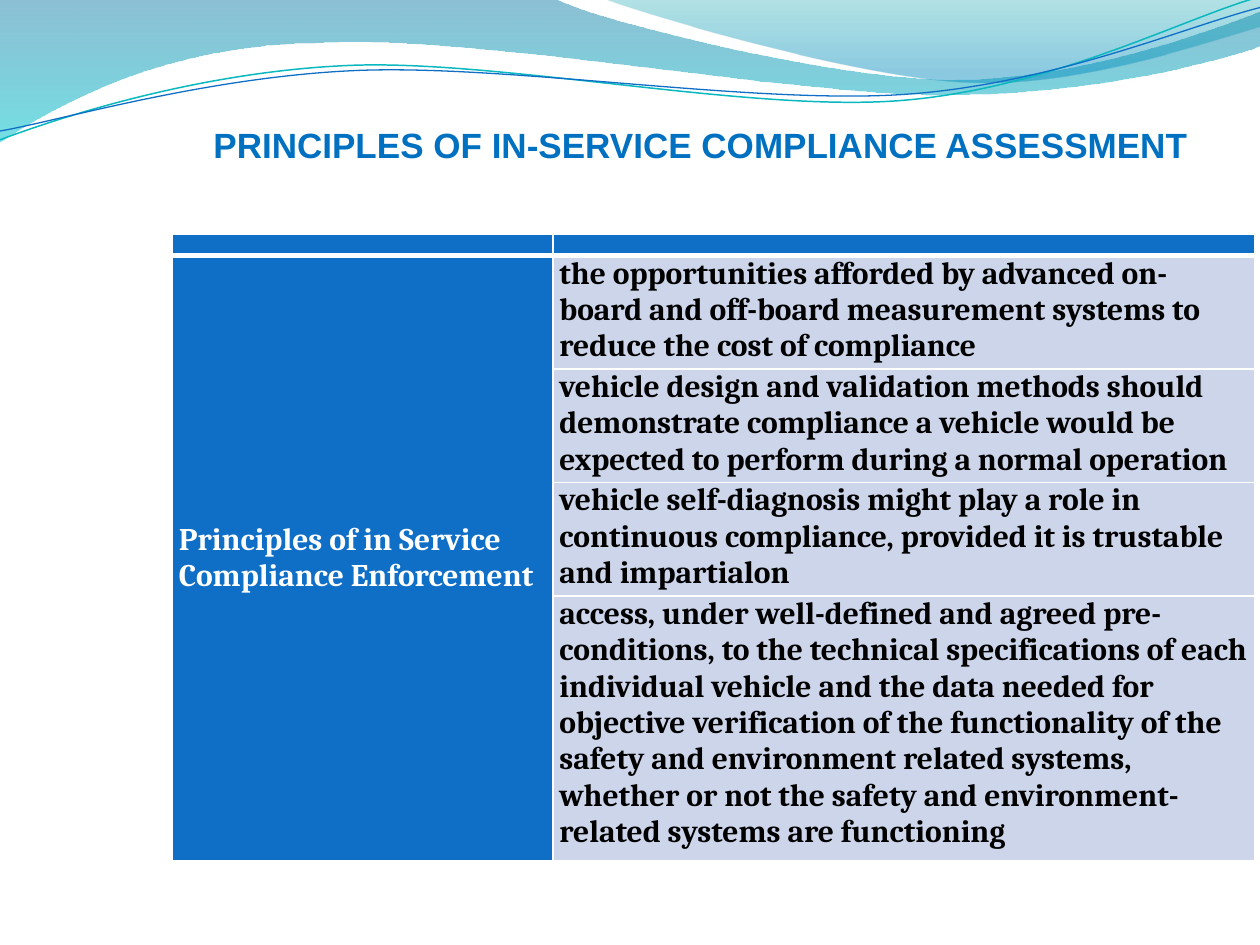
from dataclasses import dataclass

from lxml.etree import SubElement
from pptx import Presentation
from pptx.dml.color import RGBColor as Color
from pptx.enum.text import MSO_ANCHOR as Anchor, PP_ALIGN as Align
from pptx.oxml.ns import qn
from pptx.util import Inches, Pt


@dataclass(frozen=True)
class Theme:
    title: str = "0070C0"
    header: str = "0F6FC6"
    body: str = "CCD5EA"
    text: str = "000000"
    white: str = "FFFFFF"
    wave_line: str = "0AB8BF"
    wave_stops: tuple = ((0, "0074A1", 45), (1, "00C6CF", 55))
    crest_stops: tuple = ((0, "00A1A9", 30), (0.8, "008BBF", 45))
    title_font: str = "Arial"
    table_font: str = "Cambria"
    title_size: int = 20
    table_size: int = 18
    header_size: int = 8


WAVE = [
    (0, -0.01), (4.4, -0.01),
    (4.76, 0.17, 6.64, 0.63, 7.58, 0.63), (8.53, 0.63, 9.58, 0.26, 10, 0.09),
    (10.01, 0.36),
    (9.83, 0.44, 8.7, 0.76, 7.46, 0.75), (6.22, 0.75, 3.82, 0.28, 2.57, 0.34),
    (1.29, 0.35, 0.46, 0.83, -0.01, 1.13),
]
CREST = [
    (4.79, -0.01),
    (5.09, 0.11, 6.82, 0.62, 7.69, 0.65), (8.56, 0.69, 9.61, 0.32, 10, 0.21),
    (10, 0),
]
TEAL_LINE = [
    (0, 1.11), (0.48, 0.93, 1.58, 0.57, 2.77, 0.52),
    (3.95, 0.47, 5.93, 0.89, 7.13, 0.8), (8.33, 0.71, 9.38, 0.15, 9.98, -0.02),
]
BLUE_LINE = [
    (0, 1.04), (0.47, 0.96, 1.64, 0.61, 2.83, 0.56),
    (4.03, 0.51, 5.97, 0.83, 7.17, 0.75), (8.36, 0.67, 9.41, 0.21, 10, 0.06),
]
PRINCIPLES = [
    "the opportunities afforded by advanced on-board and off-board measurement "
    "systems to reduce the cost of compliance",
    "vehicle design and validation methods should demonstrate compliance a vehicle "
    "would be expected to perform during a normal operation",
    "vehicle self-diagnosis might play a role in continuous compliance, provided it "
    "is trustable and impartialon",
    "access, under well-defined and agreed pre-conditions, to the technical "
    "specifications of each individual vehicle and the data needed for objective "
    "verification of the functionality of the safety and environment related systems, "
    "whether or not the safety and environment-related systems are functioning",
]


class SlideBuilder:
    def __init__(self, slide, theme):
        self.slide = slide
        self.theme = theme

    def outline(self, segments, close):
        points = [
            (Inches(x), Inches(y))
            for segment in segments
            for x, y in zip(segment[::2], segment[1::2])
        ]
        builder = self.slide.shapes.build_freeform(*points[0])
        builder.add_line_segments(points[1:], close=close)
        shape = builder.convert_to_shape()
        shape.shadow.inherit = False
        lines = iter(list(shape._element.spPr.iter(qn("a:lnTo"))))
        for segment in segments[1:]:
            bend = next(lines)
            if len(segment) == 6:
                bend.tag = qn("a:cubicBezTo")
                for line in (next(lines), next(lines)):
                    bend.append(line[0])
                    line.getparent().remove(line)
        return shape

    def wave(self, segments, stops):
        shape = self.outline(segments, True)
        shape.line.fill.background()
        shape.fill.gradient()
        shape.fill.gradient_angle = 270
        for stop, (position, color, _) in zip(shape.fill.gradient_stops, stops):
            stop.position = position
            stop.color.rgb = Color.from_string(color)
        colors = shape._element.spPr.iter(qn("a:srgbClr"))
        for element, (_, _, opacity) in zip(colors, stops):
            SubElement(element, qn("a:alpha"), val=str(opacity * 1000))

    def curve(self, segments, color, width):
        shape = self.outline(segments, False)
        shape.fill.background()
        shape.line.color.rgb = Color.from_string(color)
        shape.line.width = Pt(width)

    def style(self, paragraph, font, size, color):
        paragraph.font.name = font
        paragraph.font.size = Pt(size)
        paragraph.font.bold = True
        paragraph.font.color.rgb = Color.from_string(color)

    def title(self, text, left, top, width, height):
        shape = self.slide.shapes.title
        shape.left, shape.top = Inches(left), Inches(top)
        shape.width, shape.height = Inches(width), Inches(height)
        frame = shape.text_frame
        frame.text = text
        frame.word_wrap = True
        frame.vertical_anchor = Anchor.TOP
        frame.margin_top = Inches(0.38)
        paragraph = frame.paragraphs[0]
        paragraph.alignment = Align.CENTER
        self.style(paragraph, self.theme.title_font, self.theme.title_size, self.theme.title)

    def cell(self, cell, fill, bottom=1):
        properties = cell._tc.get_or_add_tcPr()
        for side, width in (("L", 1), ("R", 1), ("T", 1), ("B", bottom)):
            border = SubElement(properties, qn(f"a:ln{side}"), w=str(Pt(width)))
            solid = SubElement(border, qn("a:solidFill"))
            SubElement(solid, qn("a:srgbClr"), val=self.theme.white)
        cell.fill.solid()
        cell.fill.fore_color.rgb = Color.from_string(fill)
        cell.margin_left = cell.margin_right = Inches(0.05)
        cell.margin_top = cell.margin_bottom = 0

    def cell_text(self, cell, text, color):
        cell.text = text
        paragraph = cell.text_frame.paragraphs[0]
        paragraph.alignment = Align.LEFT
        self.style(paragraph, self.theme.table_font, self.theme.table_size, color)

    def table(self, heading, items, left, top, columns, rows):
        theme = self.theme
        table = self.slide.shapes.add_table(
            len(rows), len(columns), Inches(left), Inches(top),
            Inches(sum(columns)), Inches(sum(rows)),
        ).table
        for column, width in zip(table.columns, columns):
            column.width = Inches(width)
        for row, height in zip(table.rows, rows):
            row.height = Inches(height)
        for cell in table.rows[0].cells:
            self.cell(cell, theme.header, bottom=3)
            ending = cell.text_frame.paragraphs[0]._p.get_or_add_endParaRPr()
            ending.set("sz", str(theme.header_size * 100))
        for index, item in enumerate(items, 1):
            self.cell(table.cell(index, 0), theme.header)
            self.cell(table.cell(index, 1), theme.body)
            self.cell_text(table.cell(index, 1), item, theme.text)
        side = table.cell(1, 0)
        side.merge(table.cell(len(items), 0))
        side.vertical_anchor = Anchor.MIDDLE
        self.cell_text(side, heading, theme.white)


def main():
    presentation = Presentation()
    presentation.slide_width, presentation.slide_height = Inches(10), Inches(7.5)
    theme = Theme()
    slide = presentation.slides.add_slide(presentation.slide_layouts[5])
    builder = SlideBuilder(slide, theme)
    builder.wave(WAVE, theme.wave_stops)
    builder.wave(CREST, theme.crest_stops)
    builder.curve(TEAL_LINE, theme.wave_line, 0.85)
    builder.curve(BLUE_LINE, theme.header, 0.75)
    builder.title("PRINCIPLES OF IN-SERVICE COMPLIANCE ASSESSMENT", 1.13, 0.6, 8.86, 1.31)
    builder.table(
        "Principles of in Service Compliance Enforcement ", PRINCIPLES,
        1.37, 1.86, (3.02, 5.57), (0.17, 0.9, 0.9, 0.9, 2.1),
    )
    presentation.save("out.pptx")


if __name__ == "__main__":
    main()
